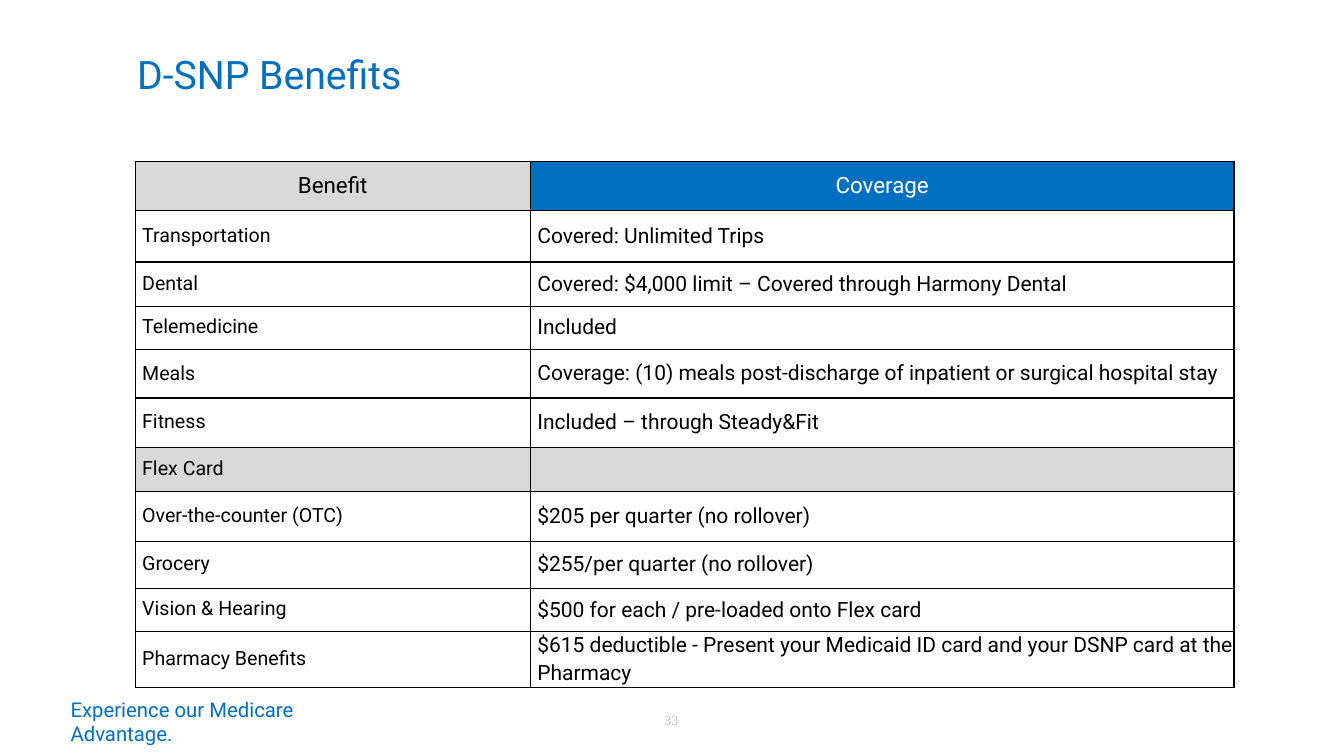
from lxml import etree
from pptx import Presentation
from pptx.dml.color import RGBColor
from pptx.enum import text
from pptx.oxml import ns
from pptx.util import Inches, Pt

BLUE = RGBColor(0x00, 0x6F, 0xC0)
GRAY = RGBColor(0xD9, 0xD9, 0xD9)
PALE = RGBColor(0xBE, 0xBE, 0xBE)
BLACK = RGBColor(0, 0, 0)
WHITE = RGBColor(0xFF, 0xFF, 0xFF)

TITLE = "D-SNP Benefits"
TAGLINE = "Experience our Medicare Advantage."
PAGE = "33"
HEADER = ("Benefit", "Coverage")
HEADER_HEIGHT, HEADER_TOP = 0.49, 0.11

# benefit, coverage lines, row height, top margin of each cell
BENEFITS = [
    ("Transportation", ["Covered: Unlimited Trips"], 0.51, (0.13, 0.13)),
    ("Dental", ["Covered: $4,000 limit – Covered through Harmony Dental"], 0.44, (0.1, 0.1)),
    ("Telemedicine", ["Included"], 0.43, (0.09, 0.09)),
    ("Meals", ["Coverage: (10) meals post-discharge of inpatient or surgical hospital stay"],
     0.48, (0.12, 0.11)),
    ("Fitness", ["Included – through Steady&Fit"], 0.49, (0.12, 0.12)),
    ("Flex Card", [], 0.44, (0.1, 0.1)),
    ("Over-the-counter (OTC)", ["$205 per quarter (no rollover)"], 0.49, (0.12, 0.12)),
    ("Grocery", ["$255/per quarter (no rollover)"], 0.47, (0.11, 0.11)),
    ("Vision & Hearing", ["$500 for each / pre-loaded onto Flex card"], 0.43, (0.09, 0.09)),
    ("Pharmacy Benefits",
     ["$615 deductible - Present your Medicaid ID card and your DSNP card at the", "Pharmacy"],
     0.55, (0.15, 0.01)),
]
COLUMNS = (3.92, 6.98)
TABLE_LEFT, TABLE_TOP = 1.34, 1.6
INDENT = 0.07


def write(tf, lines, size, color=BLACK, font="Roboto", align=text.PP_ALIGN.LEFT,
          spacing=None):
    for i, line in enumerate(lines):
        p = tf.paragraphs[0] if i == 0 else tf.add_paragraph()
        p.alignment = align
        if spacing:
            p.line_spacing = Pt(spacing)
        r = p.add_run()
        r.text = line
        r.font.name, r.font.size, r.font.color.rgb = font, Pt(size), color


def add_label(s, box, line, size, **fmt):
    tf = s.shapes.add_textbox(*map(Inches, box)).text_frame
    tf.word_wrap = True
    tf.margin_left = tf.margin_right = tf.margin_top = tf.margin_bottom = 0
    write(tf, [line], size, **fmt)


def format_cell(cell, top, left=0, fill=None):
    """Set margins, fill and a thin black border on all sides."""
    cell.margin_left, cell.margin_top = Inches(left), Inches(top)
    cell.margin_right = cell.margin_bottom = 0
    tcPr = cell._tc.get_or_add_tcPr()
    for side in ("a:lnL", "a:lnR", "a:lnT", "a:lnB"):
        ln = etree.SubElement(tcPr, ns.qn(side), w=str(Pt(1)))
        solid = etree.SubElement(ln, ns.qn("a:solidFill"))
        etree.SubElement(solid, ns.qn("a:srgbClr"), val=str(BLACK))
    if fill is None:
        cell.fill.background()
    else:
        cell.fill.solid()
        cell.fill.fore_color.rgb = fill


def add_benefits_table(s):
    heights = [HEADER_HEIGHT] + [height for _, _, height, _ in BENEFITS]
    table = s.shapes.add_table(
        len(heights), len(COLUMNS), Inches(TABLE_LEFT), Inches(TABLE_TOP),
        Inches(sum(COLUMNS)), Inches(sum(heights))).table
    table.first_row = table.horz_banding = False
    for column, width in zip(table.columns, COLUMNS):
        column.width = Inches(width)
    for row, height in zip(table.rows, heights):
        row.height = Inches(height)

    for col, (fill, color) in enumerate(((GRAY, BLACK), (BLUE, WHITE))):
        cell = table.cell(0, col)
        format_cell(cell, HEADER_TOP, fill=fill)
        write(cell.text_frame, [HEADER[col]], 16, color=color,
              align=text.PP_ALIGN.CENTER)

    for row, (benefit, coverage, _, tops) in enumerate(BENEFITS, start=1):
        fill = None if coverage else GRAY
        for col, (lines, size) in enumerate((([benefit], 14), (coverage, 15))):
            cell = table.cell(row, col)
            format_cell(cell, tops[col], INDENT, fill)
            write(cell.text_frame, lines, size)
            for p in cell.text_frame.paragraphs[1:]:
                p.space_before, p.line_spacing = Pt(2.8), Pt(17.4)


def main():
    prs = Presentation()
    prs.slide_width, prs.slide_height = Inches(13.33), Inches(7.5)
    s = prs.slides.add_slide(prs.slide_layouts[6])
    add_label(s, (1.36, 0.5, 8.13, 0.65), TITLE, 28, color=BLUE)
    add_benefits_table(s)
    add_label(s, (0.7, 6.92, 3.16, 0.48), TAGLINE, 14.5, color=BLUE, spacing=17.3)
    add_label(s, (6.59, 7.06, 0.2, 0.18), PAGE, 10, color=PALE,
              font="Times New Roman", spacing=11.9)
    prs.save("out.pptx")


if __name__ == "__main__":
    main()
